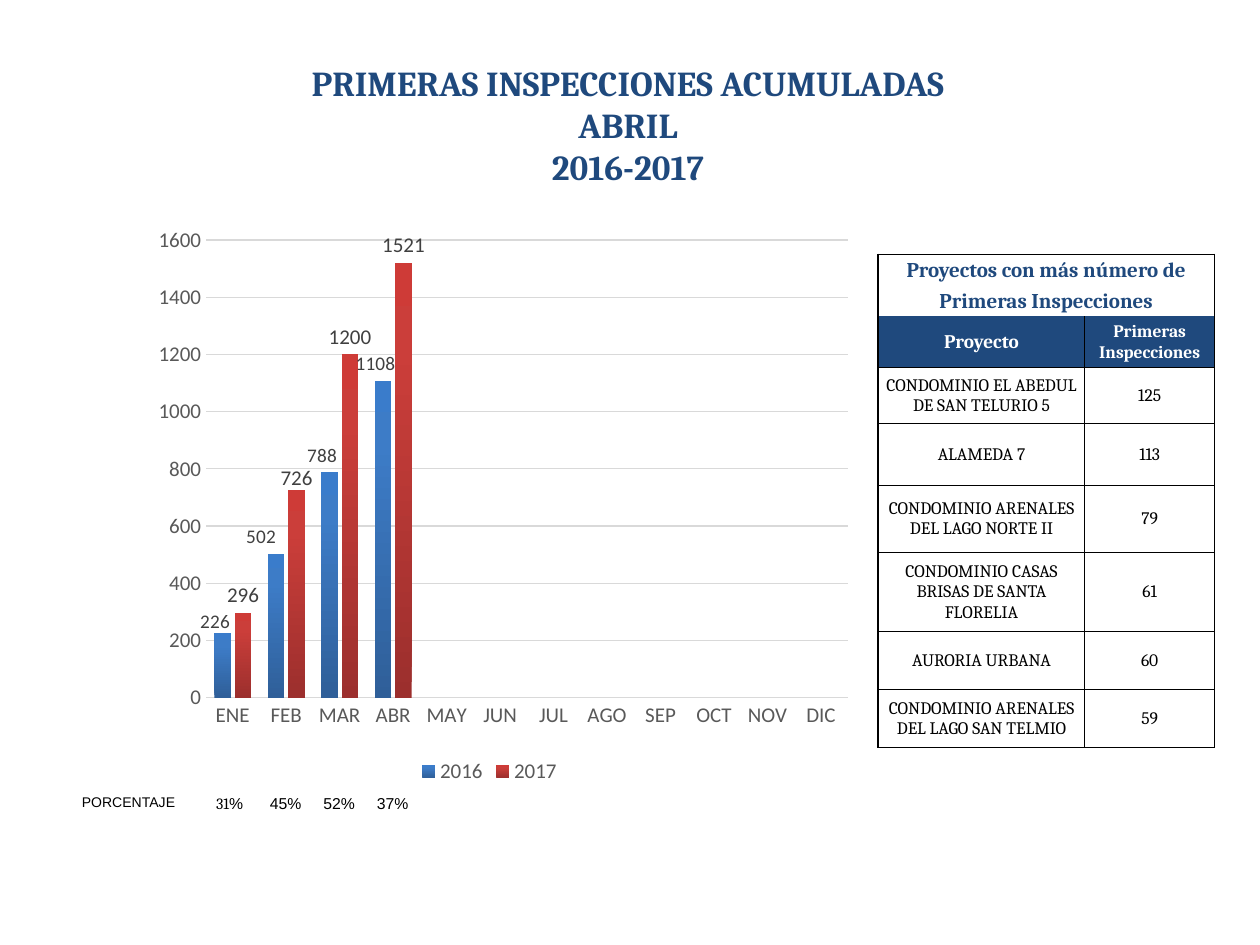
from copy import deepcopy
from dataclasses import dataclass

from lxml.etree import SubElement
from pptx import Presentation
from pptx.chart.data import CategoryChartData
from pptx.dml.color import RGBColor
from pptx.enum.chart import (XL_CHART_TYPE, XL_LABEL_POSITION,
                             XL_LEGEND_POSITION, XL_TICK_MARK)
from pptx.enum.text import MSO_ANCHOR, MSO_AUTO_SIZE, PP_ALIGN
from pptx.oxml.ns import qn
from pptx.util import Cm, Pt

NO_STYLE = "{2D5ABB26-0587-4C30-8999-92F81FD0307C}"


@dataclass(frozen=True)
class Theme:
    navy: str = "1F497D"
    black: str = "000000"
    white: str = "FFFFFF"
    axis: str = "595959"
    label: str = "404040"
    grid: str = "D9D9D9"
    bars: tuple = (("2F5F99", "3D7CC7", "3A7CCB"),
                   ("9C2F2D", "CB3E3A", "CE3B37"))
    serif: str = "Cambria"
    sans: str = "Arial"
    chart: str = "Calibri"
    title_size: int = 20
    caption_size: int = 12
    head_size: int = 11
    body_size: int = 10
    percent_size: int = 9
    note_size: int = 8
    axis_size: int = 12
    label_sizes: tuple = (11, 12)


MONTHS = ["ENE", "FEB", "MAR", "ABR", "MAY", "JUN",
          "JUL", "AGO", "SEP", "OCT", "NOV", "DIC"]
INSPECTIONS = {"2016": [226, 502, 788, 1108], "2017": [296, 726, 1200, 1521]}
# Label shifts as fractions of the chart: (series, point) -> (x, y)
LABEL_SHIFTS = {(0, 0): (-0.01, 0.01), (0, 1): (-0.02, 0), (0, 2): (-0.01, 0),
                (0, 3): (-0.01, 0), (1, 1): (0, 0.01)}
PROJECTS = [
    ("CONDOMINIO EL ABEDUL DE SAN TELURIO 5", 125),
    ("ALAMEDA 7", 113),
    ("CONDOMINIO ARENALES DEL LAGO NORTE II", 79),
    ("CONDOMINIO CASAS BRISAS DE SANTA FLORELIA", 61),
    ("AURORIA URBANA", 60),
    ("CONDOMINIO ARENALES DEL LAGO SAN TELMIO", 59),
]
COL_WIDTHS = [4.17, 2.61]
ROW_HEIGHTS = [0.64, 0.61, 1.02, 1.14, 1.24, 1.35, 1.6, 1.17, 1.17]


def set_font(font, name, size, color, bold=False):
    font.name, font.size, font.bold = name, Pt(size), bold
    font.color.rgb = RGBColor.from_string(color)


def add_layout(parent, index, **values):
    """Insert a manual chart layout under parent, in schema order of values."""
    layout = parent.makeelement(qn("c:layout"), {})
    manual = SubElement(layout, qn("c:manualLayout"))
    for tag, val in values.items():
        SubElement(manual, qn(f"c:{tag}"), val=str(val))
    parent.insert(index, layout)


class SlideBuilder:
    def __init__(self, slide, theme):
        self.s, self.theme = slide, theme

    def title(self, lines, left, top, width, height):
        t, sp = self.theme, self.s.shapes.title
        sp.left, sp.top, sp.width, sp.height = map(Cm, (left, top, width, height))
        tf = sp.text_frame
        tf.text = "\n".join(lines)
        tf.vertical_anchor, tf.auto_size = MSO_ANCHOR.TOP, MSO_AUTO_SIZE.NONE
        for p in tf.paragraphs:
            p.alignment, p.space_before = PP_ALIGN.CENTER, Pt(0)
            for r in p.runs:
                set_font(r.font, t.serif, t.title_size, t.navy, True)

    def text(self, runs, left, top, width, height, size, inset=0.25, tabs=()):
        """Add one line made of (text, font name) runs."""
        sp = self.s.shapes.add_textbox(*map(Cm, (left, top, width, height)))
        tf = sp.text_frame
        tf.word_wrap, tf.margin_left = True, Cm(inset)
        p = tf.paragraphs[0]
        if tabs:
            tab_list = SubElement(p._p.get_or_add_pPr(), qn("a:tabLst"))
            for pos in tabs:
                SubElement(tab_list, qn("a:tab"), pos=str(Cm(pos)), algn="l")
        for text, name in runs:
            r = p.add_run()
            r.text = text
            set_font(r.font, name, size, self.theme.black)

    def cell(self, cell, text, size, color, borders, bold=False, fill=None):
        """Fill a cell; borders maps a side (L, R, T, B) to points."""
        cell.text = text
        cell.vertical_anchor = MSO_ANCHOR.MIDDLE
        cell.margin_left = cell.margin_right = cell.margin_top = Cm(0.02)
        cell.margin_bottom = 0
        p = cell.text_frame.paragraphs[0]
        p.alignment = PP_ALIGN.CENTER
        for r in p.runs:
            set_font(r.font, self.theme.serif, size, color, bold)
        tc_pr = cell._tc.get_or_add_tcPr()
        for side in "LRTB":
            if side in borders:
                ln = SubElement(tc_pr, qn(f"a:ln{side}"), w=str(Pt(borders[side])))
                SubElement(SubElement(ln, qn("a:solidFill")), qn("a:srgbClr"),
                           val=self.theme.black)
        if fill:
            cell.fill.solid()
            cell.fill.fore_color.rgb = RGBColor.from_string(fill)
        else:
            cell.fill.background()

    def table(self, captions, heads, rows, left, top):
        t = self.theme
        frame = self.s.shapes.add_table(
            len(ROW_HEIGHTS), len(COL_WIDTHS), Cm(left), Cm(top),
            Cm(sum(COL_WIDTHS)), Cm(sum(ROW_HEIGHTS)))
        tbl = frame.table
        tbl._tbl.tblPr.find(qn("a:tableStyleId")).text = NO_STYLE
        tbl.first_row = tbl.horz_banding = False
        for col, width in zip(tbl.columns, COL_WIDTHS):
            col.width = Cm(width)
        for row, height in zip(tbl.rows, ROW_HEIGHTS):
            row.height = Cm(height)

        for i, caption in enumerate(captions):
            tbl.cell(i, 0).merge(tbl.cell(i, 1))
            for j, text in enumerate((caption, "")):
                borders = {"L": 1, "R": 1} | ({"T": 1} if i == 0 else {})
                self.cell(tbl.cell(i, j), text, t.caption_size, t.navy, borders, True)
        sides = ({"L": 1, "R": 0.5, "B": 0.5}, {"L": 0.5, "R": 1, "B": 0.5})
        for j, (text, size) in enumerate(zip(heads, (t.head_size, t.body_size))):
            self.cell(tbl.cell(len(captions), j), text, size, t.white,
                      sides[j], True, t.navy)
        for i, row in enumerate(rows, len(captions) + 1):
            for j, value in enumerate(row):
                self.cell(tbl.cell(i, j), str(value), t.body_size, t.black,
                          sides[j] | {"T": 0.5})

    def chart(self, categories, series, left, top, width, height):
        t = self.theme
        data = CategoryChartData()
        data.categories = categories
        for name, values in series.items():
            data.add_series(name, values + [None] * (len(categories) - len(values)))
        chart = self.s.shapes.add_chart(
            XL_CHART_TYPE.COLUMN_CLUSTERED,
            *map(Cm, (left, top, width, height)), data).chart
        set_font(chart.font, t.chart, t.body_size, t.black)
        chart.has_title = False
        chart.has_legend = True
        chart.legend.position = XL_LEGEND_POSITION.BOTTOM
        chart.legend.include_in_layout = False
        set_font(chart.legend.font, t.chart, t.axis_size, t.axis)
        for axis in (chart.category_axis, chart.value_axis):
            axis.major_tick_mark = axis.minor_tick_mark = XL_TICK_MARK.NONE
            set_font(axis.tick_labels.font, t.chart, t.axis_size, t.axis)
        chart.value_axis.minimum_scale = 0
        chart.value_axis.format.line.fill.background()
        for line, weight in ((chart.category_axis.format.line, 1),
                             (chart.value_axis.major_gridlines.format.line, 0.75)):
            line.width = Pt(weight)
            line.color.rgb = RGBColor.from_string(t.grid)
        plot = chart.plots[0]
        plot.gap_width, plot.overlap, plot.vary_by_categories = 100, -24, False
        area = plot._element.getparent()
        for old in area.findall(qn("c:layout")):
            area.remove(old)
        add_layout(area, 0, layoutTarget="inner", xMode="edge", yMode="edge",
                   x=0.12, y=0.04, w=0.86, h=0.8)
        for i, ser in enumerate(plot.series):
            self.bars(ser, t.bars[i])
            self.labels(ser, i, t.label_sizes[i])

    def bars(self, ser, colors):
        fill = ser.format.fill
        fill.gradient()
        fill.gradient_angle = 90
        stops = next(ser._element.iter(qn("a:gsLst")))
        stops.append(deepcopy(stops[-1]))
        for stop, pos, color in zip(fill.gradient_stops, (0, 0.8, 1), colors):
            stop.position = pos
            stop.color.rgb = RGBColor.from_string(color)

    def labels(self, ser, index, size):
        t, labels = self.theme, ser.data_labels
        labels.show_value = True
        labels.position = XL_LABEL_POSITION.OUTSIDE_END
        set_font(labels.font, t.chart, size, t.label)
        for (i, point), (x, y) in LABEL_SHIFTS.items():
            if i == index:
                label = ser.points[point].data_label
                set_font(label.font, t.chart, size, t.label)
                label.position = XL_LABEL_POSITION.OUTSIDE_END
                d_lbl = next(d for d in ser._element.iter(qn("c:dLbl"))
                             if d.find(qn("c:idx")).get("val") == str(point))
                add_layout(d_lbl, 1, x=x, y=y)


def main():
    prs = Presentation()
    prs.slide_width, prs.slide_height = Cm(25.4), Cm(19.05)
    theme = Theme()
    b = SlideBuilder(prs.slides.add_slide(prs.slide_layouts[5]), theme)
    b.title(["PRIMERAS INSPECCIONES ACUMULADAS", "ABRIL", "2016-2017"],
            4.52, 1.12, 16.28, 2.82)
    b.text([("PORCENTAJE", theme.sans)], 1.4, 15.88, 2.51, 0.6, theme.note_size)
    b.text([("31", theme.serif), ("%\t45%\t52%\t37%", theme.sans)],
           3.91, 15.88, 4.8, 0.64, theme.percent_size, inset=0.45,
           tabs=[1.08 * n for n in (1, 2, 3)])
    b.table(["Proyectos con más número de", "Primeras Inspecciones"],
            ["Proyecto", "Primeras Inspecciones"], PROJECTS, 17.7, 5.13)
    b.chart(MONTHS, INSPECTIONS, 2.35, 4.38, 15.04, 11.53)
    prs.save("out.pptx")


if __name__ == "__main__":
    main()
